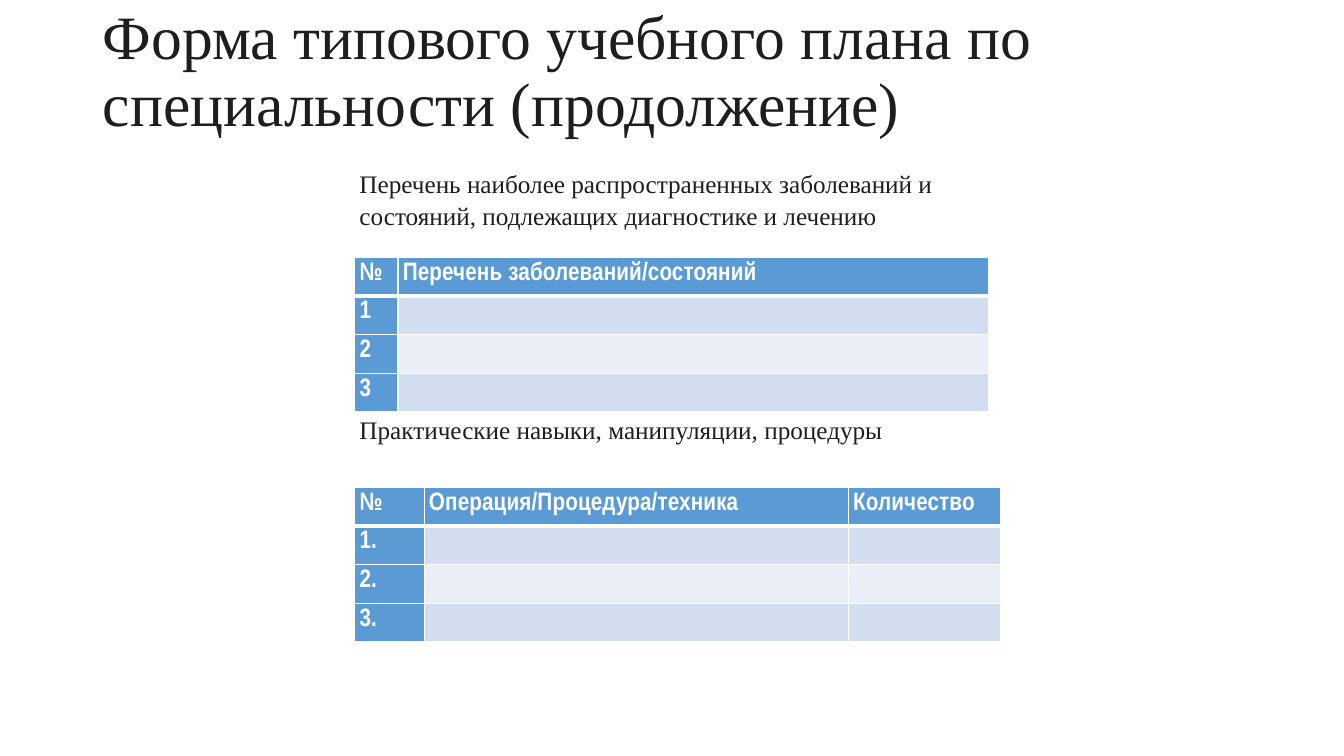
from lxml import etree
from pptx import Presentation
from pptx.dml.color import RGBColor
from pptx.enum.text import MSO_ANCHOR, MSO_AUTO_SIZE, PP_ALIGN
from pptx.oxml.ns import qn
from pptx.util import Cm, Pt

LEFT = PP_ALIGN.LEFT
MIDDLE = MSO_ANCHOR.MIDDLE
NO_FIT = MSO_AUTO_SIZE.NONE
TITLE_ONLY = 5

COLORS = {
    "text": "1E1E1E",
    "white": "FFFFFF",
    "header": "5B9BD5",
    "odd_row": "D2DEEF",
    "even_row": "EAEFF7",
}
SERIF = "Times New Roman"
TITLE_FONT = {"name": SERIF, "size": Pt(44)}
BODY_FONT = {"name": SERIF, "size": Pt(18)}
TABLE_FONT = {"name": "Arial Narrow", "size": Pt(18), "bold": True}
TITLE_PARAGRAPH = {"alignment": LEFT, "line_spacing": 0.9}
SPACED_PARAGRAPH = {"alignment": LEFT, "line_spacing": 1.07, "space_after": Pt(8)}
PLAIN_PARAGRAPH = {"alignment": LEFT}
CELL_MARGINS = {
    "margin_left": Cm(0.12),
    "margin_right": Cm(0.12),
    "margin_top": Cm(0.08),
    "margin_bottom": Cm(0.08),
}
ROW_HEIGHT = 0.97


def set_attributes(target, values):
    for name, value in values.items():
        setattr(target, name, value)


def place(shape, left, top, width, height):
    box = {"left": left, "top": top, "width": width, "height": height}
    set_attributes(shape, {name: Cm(value) for name, value in box.items()})


class CurriculumSlide:
    def __init__(self, presentation):
        self.slide = presentation.slides.add_slide(presentation.slide_layouts[TITLE_ONLY])

    def add_text(self, text_frame, text, font, paragraph_format, color="text"):
        paragraph = text_frame.paragraphs[0]
        set_attributes(paragraph, paragraph_format)
        run = paragraph.add_run()
        run.text = text
        set_attributes(run.font, font)
        run.font.color.rgb = RGBColor.from_string(COLORS[color])
        return run

    def title(self, text, *box):
        shape = self.slide.shapes.title
        place(shape, *box)
        set_attributes(
            shape.text_frame,
            {"vertical_anchor": MIDDLE, "word_wrap": True, "auto_size": NO_FIT},
        )
        self.add_text(shape.text_frame, text, TITLE_FONT, TITLE_PARAGRAPH)

    def caption(self, text, paragraph_format, *box):
        shape = self.slide.shapes.add_textbox(*map(Cm, box))
        shape.text_frame.word_wrap = True
        self.add_text(shape.text_frame, text, BODY_FONT, paragraph_format)

    def borders(self, cell, row_index):
        """Draw white cell borders, thick between the header and the body."""
        widths = {
            "L": 1,
            "R": 1,
            "T": 3 if row_index == 1 else 1,
            "B": 3 if row_index == 0 else 1,
        }
        properties = cell._tc.get_or_add_tcPr()
        for position, (side, width) in enumerate(widths.items()):
            line = etree.Element(qn(f"a:ln{side}"), w=str(Pt(width)))
            fill = etree.SubElement(line, qn("a:solidFill"))
            etree.SubElement(fill, qn("a:srgbClr"), val=COLORS["white"])
            properties.insert(position, line)

    def table(self, headings, labels, column_widths, left, top):
        """Add a table with a heading row, a label column and empty body cells."""
        rows = [headings] + [[label] + [""] * (len(headings) - 1) for label in labels]
        size = (sum(column_widths), ROW_HEIGHT * len(rows))
        frame = self.slide.shapes.add_table(
            len(rows), len(headings), *map(Cm, (left, top, *size))
        )
        table = frame.table
        for column, width in zip(table.columns, column_widths):
            column.width = Cm(width)
        for row_index, texts in enumerate(rows):
            table.rows[row_index].height = Cm(ROW_HEIGHT)
            band = "odd_row" if row_index % 2 else "even_row"
            for column_index, text in enumerate(texts):
                cell = table.cell(row_index, column_index)
                set_attributes(cell, CELL_MARGINS)
                color = "header" if row_index == 0 or column_index == 0 else band
                cell.fill.solid()
                cell.fill.fore_color.rgb = RGBColor.from_string(COLORS[color])
                self.borders(cell, row_index)
                if text:
                    run = self.add_text(
                        cell.text_frame, text, TABLE_FONT, SPACED_PARAGRAPH, "white"
                    )
                    run._r.get_or_add_rPr().set("spc", "10")


def main():
    presentation = Presentation()
    presentation.slide_width = Cm(33.87)
    presentation.slide_height = Cm(19.05)

    slide = CurriculumSlide(presentation)
    slide.title(
        "Форма типового учебного плана по специальности (продолжение)",
        2.34, 0, 29.21, 3.68,
    )
    slide.caption(
        "Перечень наиболее распространенных заболеваний и состояний, "
        "подлежащих диагностике и лечению",
        SPACED_PARAGRAPH, 8.81, 4.06, 16.92, 1.85,
    )
    slide.caption(
        "Практические навыки, манипуляции, процедуры",
        PLAIN_PARAGRAPH, 8.81, 10.31, 16.92, 1.02,
    )
    slide.table(
        ["№", "Перечень заболеваний/состояний"],
        ["1", "2", "3"], [1.09, 14.88], 8.94, 6.48,
    )
    slide.table(
        ["№", "Операция/Процедура/техника", "Количество"],
        ["1.", "2.", "3."], [1.75, 10.69, 3.84], 8.94, 12.27,
    )
    presentation.save("out.pptx")


if __name__ == "__main__":
    main()
